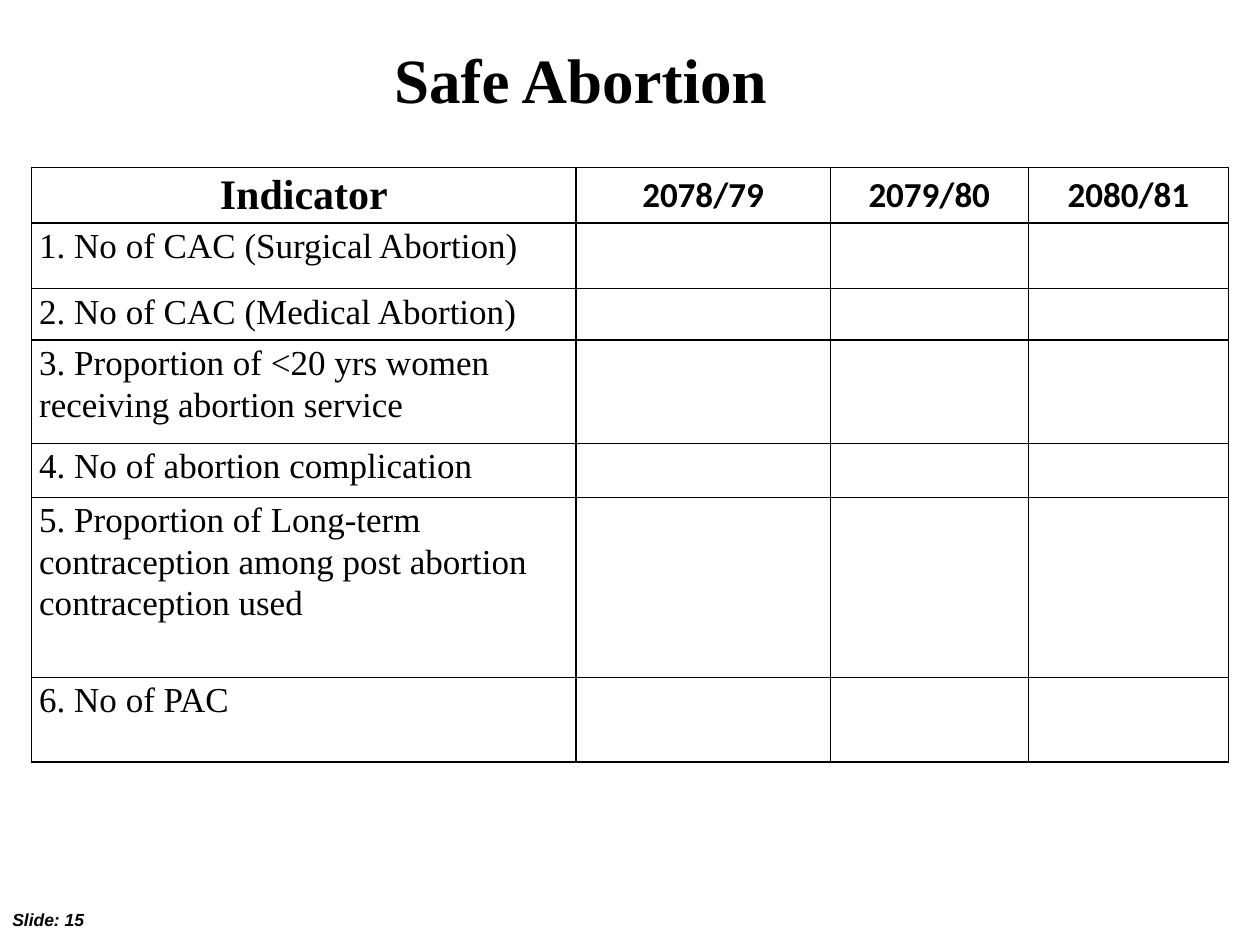
import pptx
import pptx.dml.color
import pptx.enum.text
import pptx.oxml
import pptx.oxml.ns
import pptx.util
from pptx.util import Cm

BLACK = pptx.dml.color.RGBColor(0, 0, 0)
CENTER = pptx.enum.text.PP_ALIGN.CENTER
LEFT = pptx.enum.text.PP_ALIGN.LEFT
SERIF = "Times New Roman"

YEARS = ["2078/79", "2079/80", "2080/81"]
INDICATORS = [
    "1. No of CAC (Surgical Abortion)",
    "2. No of CAC (Medical Abortion)",
    "3. Proportion of <20 yrs women receiving abortion service",
    "4. No of abortion complication",
    "5. Proportion of Long-term contraception among post abortion contraception used",
    "6. No of PAC",
]
COLUMN_WIDTHS = [10.97, 5.13, 3.99, 4.04]
ROW_HEIGHTS = [1.07, 1.32, 1.04, 2.08, 1.09, 3.63, 1.7]


def write(text_frame, text, font, size, bold=False, italic=False, align=LEFT):
    text_frame.text = text
    paragraph = text_frame.paragraphs[0]
    paragraph.alignment = align
    run_font = paragraph.runs[0].font
    run_font.name = font
    run_font.size = pptx.util.Pt(size)
    run_font.bold = bold
    run_font.italic = italic
    run_font.color.rgb = BLACK
    return paragraph


def add_label(slide, left, top, width, height, text, font, size, **style):
    label = slide.shapes.add_textbox(Cm(left), Cm(top), Cm(width), Cm(height))
    label.text_frame.word_wrap = True
    write(label.text_frame, text, font, size, **style)
    return label


def set_margins(cell, side, top):
    cell.margin_left = cell.margin_right = Cm(side)
    cell.margin_top = Cm(top)
    cell.margin_bottom = 0


def write_indicator(cell, text, size=20, **style):
    set_margins(cell, 0.15, 0.03)
    paragraph = write(cell.text_frame, text, SERIF, size, **style)
    paragraph.line_spacing = 1.07
    paragraph.space_after = pptx.util.Pt(8)


def write_year(cell, year):
    set_margins(cell, 0.18, 0)
    paragraph = write(cell.text_frame, year, "Calibri", 20, bold=True, align=CENTER)
    paragraph.line_spacing = 1.15


def style_cell(cell):
    cell.fill.background()
    properties = cell._tc.get_or_add_tcPr()
    # Borders come before the fill in the cell properties
    for index, side in enumerate(("lnL", "lnR", "lnT", "lnB")):
        properties.insert(index, pptx.oxml.parse_xml(
            f'<a:{side} {pptx.oxml.ns.nsdecls("a")} w="12700"><a:solidFill>'
            f'<a:srgbClr val="{BLACK}"/></a:solidFill></a:{side}>'))


def add_indicator_table(slide):
    table = slide.shapes.add_table(
        len(ROW_HEIGHTS), len(COLUMN_WIDTHS), Cm(0.64), Cm(3.38),
        Cm(sum(COLUMN_WIDTHS)), Cm(sum(ROW_HEIGHTS))).table
    table.first_row = table.horz_banding = False
    for column, width in zip(table.columns, COLUMN_WIDTHS):
        column.width = Cm(width)
    for row, height in zip(table.rows, ROW_HEIGHTS):
        row.height = Cm(height)
    for cell in table.iter_cells():
        style_cell(cell)

    # Header row
    write_indicator(table.cell(0, 0), "Indicator", size=24, bold=True, align=CENTER)
    for column, year in enumerate(YEARS, start=1):
        write_year(table.cell(0, column), year)

    # Indicator rows, with the year cells left open
    for row, indicator in enumerate(INDICATORS, start=1):
        write_indicator(table.cell(row, 0), indicator)


def main():
    presentation = pptx.Presentation()
    presentation.slide_width = Cm(25.4)
    presentation.slide_height = Cm(19.05)
    slide = presentation.slides.add_slide(presentation.slide_layouts[6])

    # Slide number
    add_label(slide, 0, 18.21, 2.34, 0.69, "Slide: 15", "Arial", 10,
              bold=True, italic=True)

    # Title
    title = add_label(slide, 0.43, 0.43, 22.86, 2.29, "Safe Abortion ", SERIF, 36,
                      bold=True, align=CENTER)
    title.text_frame.vertical_anchor = pptx.enum.text.MSO_ANCHOR.MIDDLE

    # Indicators by year
    add_indicator_table(slide)

    presentation.save("out.pptx")


if __name__ == "__main__":
    main()
